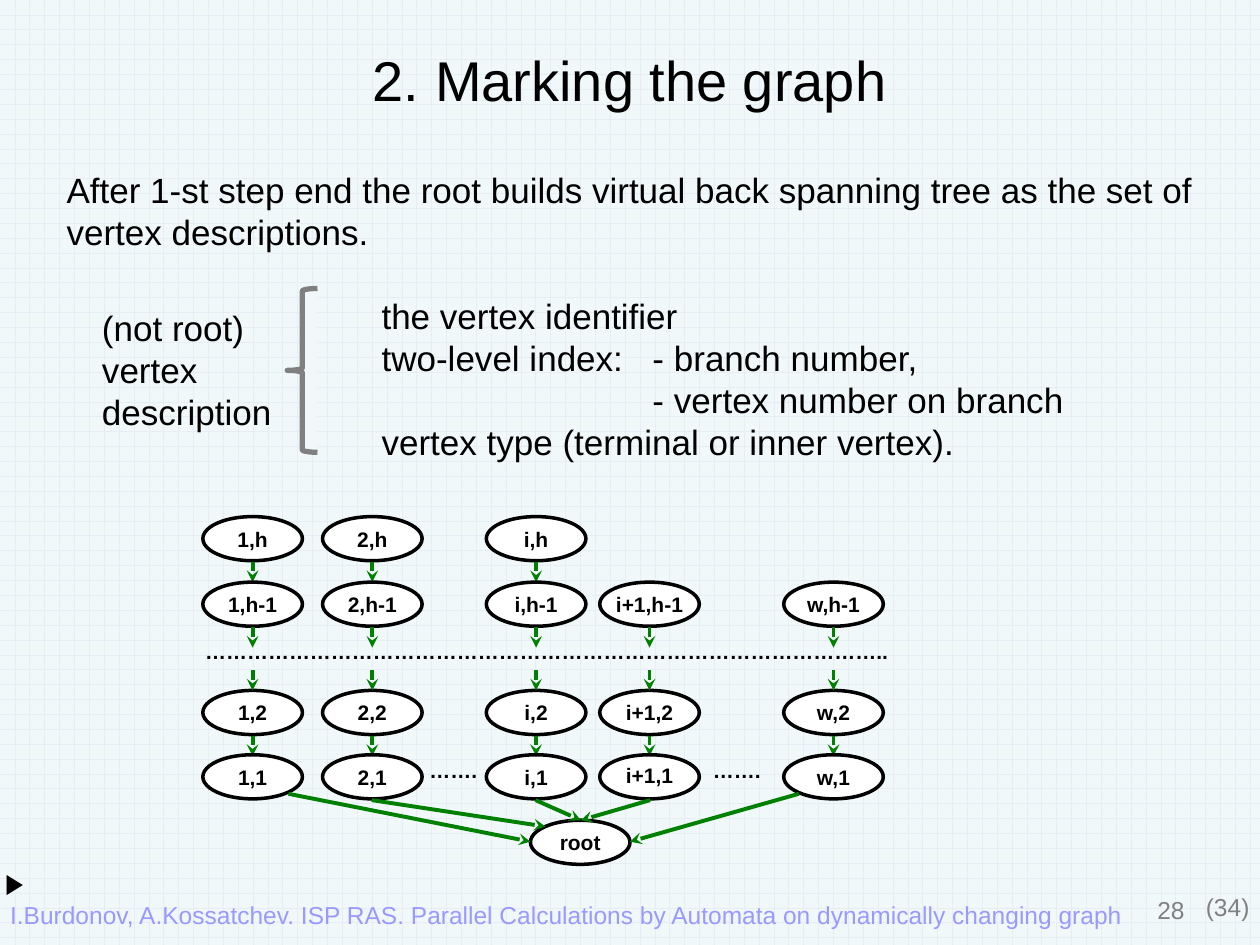
from pptx import Presentation
from pptx.util import Inches, Pt
from pptx.dml.color import RGBColor
from pptx.enum.dml import MSO_PATTERN
from pptx.enum.shapes import MSO_CONNECTOR as Conn, MSO_SHAPE as Kind
from pptx.enum.text import MSO_ANCHOR as Anchor, MSO_AUTO_SIZE as Auto
from pptx.enum.text import PP_ALIGN as Align
from pptx.oxml.ns import qn
from lxml.etree import SubElement

BLACK = RGBColor(0x00, 0x00, 0x00)
WHITE = RGBColor(0xFF, 0xFF, 0xFF)
GRAY = RGBColor(0x80, 0x80, 0x80)
GREEN = RGBColor(0x00, 0x80, 0x00)
LILAC = RGBColor(0x99, 0x99, 0xFF)
PALE = RGBColor(0xF1, 0xF8, 0xF9)
GRID = RGBColor(0xE7, 0xED, 0xF5)

NODE_W, NODE_H, STEP = 0.79, 0.35, 0.16
COLS = {"1": 1.61, "2": 2.56, "i": 3.86, "i+1": 4.76, "w": 6.22}
ROWS = {"h": 4.1, "h-1": 4.62, "2": 5.48, "1": 5.99}
TALL = ("1", "2", "i")  # branches that reach level h
ROOT = (4.21, 6.51)
ROOT_LINKS = [
    ((2.29, 6.3), (4.21, 6.68)),
    ((2.95, 6.35), (4.33, 6.56)),
    ((4.25, 6.35), (4.61, 6.51)),
    ((5.16, 6.35), (4.61, 6.51)),
    ((6.34, 6.3), (5, 6.68)),
]
DOTS = [
    (1.53, 5.02, 5.64, "…" * 32 + ".."),
    (3.31, 5.96, 0.59, "……."),
    (5.56, 5.96, 0.59, "……."),
]
INTRO = ("After 1-st step end the root builds virtual back spanning tree "
         "as the set of vertex descriptions.")
# text, left margin, first-line indent
FIELDS = [
    ("the vertex identifier", 2.5, 0),
    ("two-level index:\t- branch number,", 4.65, -2.15),
    ("- vertex number on branch", 4.65, 0),
    ("vertex type (terminal or inner vertex).", 2.5, 0),
]
FOOTER = ("I.Burdonov, A.Kossatchev. ISP RAS. Parallel Calculations by "
          "Automata on dynamically changing graph")
FLUSH = dict.fromkeys(
    ("margin_left", "margin_top", "margin_right", "margin_bottom"), 0)
GROW = {"auto_size": Auto.SHAPE_TO_FIT_TEXT}


def assign(obj, fmt):
    for key, val in fmt.items():
        setattr(obj, key, val)


def style(par, size, color=BLACK, bold=False, name="Arial", **fmt):
    assign(par, fmt)
    assign(par.font, {"size": Pt(size), "bold": bold, "name": name})
    par.font.color.rgb = color


def add_text(slide, box, lines, size, wrap=True, frame=None, **fmt):
    """Add a text box with one paragraph per line; return its frame."""
    text = slide.shapes.add_textbox(*map(Inches, box)).text_frame
    assign(text, {"word_wrap": wrap, **(frame or {})})
    text.text = "\n".join(lines)
    for par in text.paragraphs:
        style(par, size, **fmt)
    return text


def add_shape(slide, kind, box, fill, line, width):
    shape = slide.shapes.add_shape(kind, *map(Inches, box))
    shape.shadow.inherit = False
    shape.fill.solid()
    shape.fill.fore_color.rgb = fill
    shape.line.color.rgb = line
    shape.line.width = Pt(width)
    return shape


def add_node(slide, left, top, label, **fmt):
    node = add_shape(slide, Kind.OVAL, (left, top, NODE_W, NODE_H),
                     WHITE, BLACK, 2)
    text = node.text_frame
    assign(text, {**FLUSH, "word_wrap": True,
                  "vertical_anchor": Anchor.MIDDLE})
    text.text = label
    style(text.paragraphs[0], 12, bold=True, alignment=Align.CENTER, **fmt)


def add_arrow(slide, start, end):
    link = slide.shapes.add_connector(
        Conn.STRAIGHT, *map(Inches, (*start, *end)))
    link.line.color.rgb = GREEN
    link.line.width = Pt(2.25)
    SubElement(link.line._get_or_add_ln(), qn("a:tailEnd"), type="stealth")
    SubElement(link._element.spPr, qn("a:effectLst"))


def add_tree(slide):
    add_node(slide, *ROOT, "root")
    for branch, left in COLS.items():
        mid = left + NODE_W / 2
        for level, top in ROWS.items():
            if level == "h" and branch not in TALL:
                continue
            label = f"{branch},{level}"
            fmt = {"line_spacing": Pt(12)} if label == "i+1,1" else {}
            add_node(slide, left, top, label, **fmt)
            if level != "1":
                low = top + NODE_H + 0.01
                add_arrow(slide, (mid, low), (mid, low + STEP))
        low = ROWS["2"]
        add_arrow(slide, (mid, low - STEP), (mid, low))
    for start, end in ROOT_LINKS:
        add_arrow(slide, start, end)
    for left, top, width, dots in DOTS:
        add_text(slide, (left, top, width, 0.3), [dots], 12,
                 wrap=False, frame=GROW, bold=True)


def add_body(slide):
    lines = [INTRO] + [field[0] for field in FIELDS]
    text = add_text(slide, (0.43, 1.29, 9.25, 2.43), lines, 20)
    intro, *pars = text.paragraphs
    intro.space_after = Pt(18)
    pars[0].space_before = Pt(6)
    for par, (_, margin, indent) in zip(pars, FIELDS):
        props = par._p.get_or_add_pPr()
        props.set("marL", str(Inches(margin)))
        props.set("indent", str(Inches(indent)))
    add_text(slide, (0.81, 2.43, 1.36, 1.01),
             ["(not root)", "vertex", "description"], 20,
             wrap=False, frame=FLUSH)
    add_shape(slide, Kind.LEFT_BRACE, (2.28, 2.29, 0.24, 1.3), PALE, GRAY, 3)


def add_footer(slide):
    add_text(slide, (7.17, 7.05, 2.33, 0.52), ["28"], 14,
             color=GRAY, alignment=Align.RIGHT)
    add_text(slide, (9.57, 7.08, 0.35, 0.23), ["(34)"], 14,
             wrap=False, frame=FLUSH, color=GRAY)
    add_text(slide, (0.08, 7.14, 9.22, 0.59), [FOOTER], 14,
             frame=FLUSH, color=LILAC)
    add_text(slide, (0.04, 6.87, 0.12, 0.27), ["▶"], 16, wrap=False,
             frame=FLUSH, bold=True, name="Times New Roman")


def paint_back(slide):
    fill = slide.background.fill
    fill.patterned()
    fill.pattern = MSO_PATTERN.HORIZONTAL_BRICK
    fill.fore_color.rgb = GRID
    fill.back_color.rgb = PALE


def main():
    deck = Presentation()
    deck.slide_width, deck.slide_height = Inches(10), Inches(7.5)
    slide = deck.slides.add_slide(deck.slide_layouts[6])
    paint_back(slide)
    add_footer(slide)
    add_text(slide, (0.5, 0, 9, 1.25), ["2. Marking the graph"], 32,
             frame={"vertical_anchor": Anchor.MIDDLE},
             alignment=Align.CENTER)
    add_body(slide)
    add_tree(slide)
    deck.save("out.pptx")


if __name__ == "__main__":
    main()
